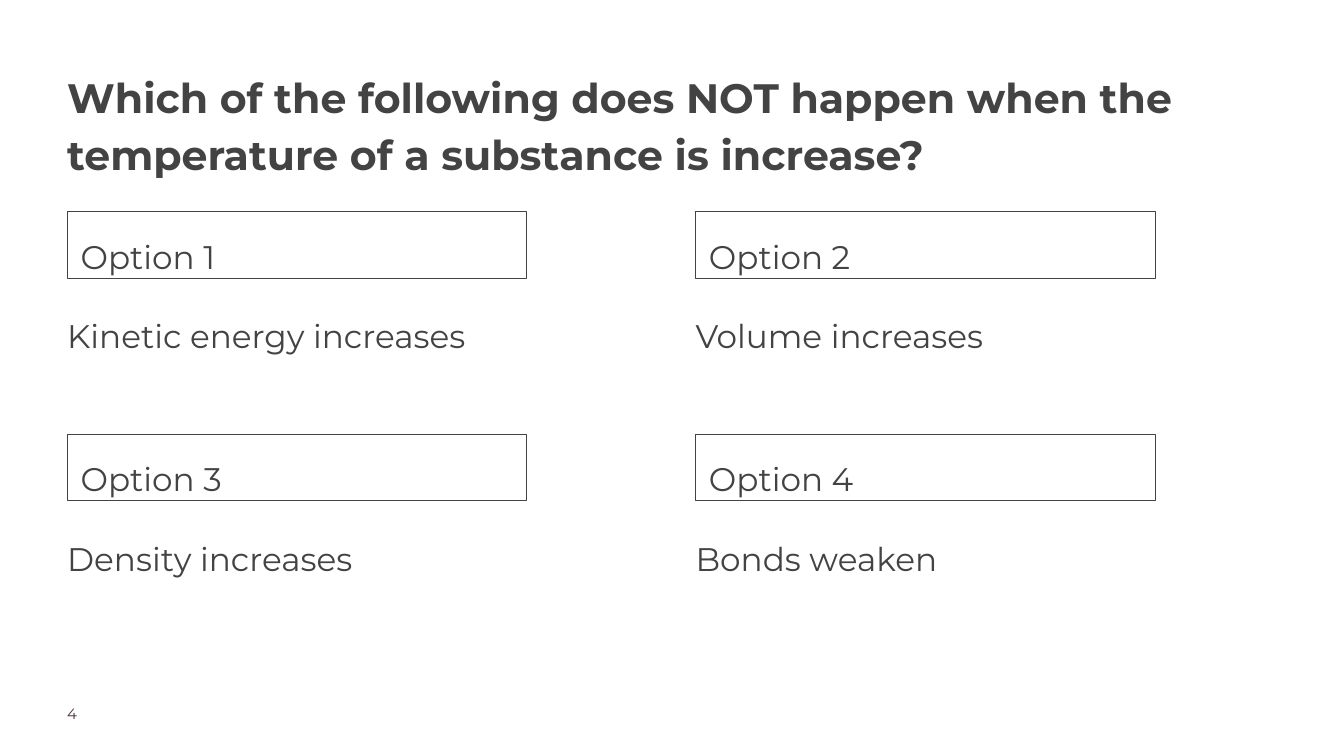
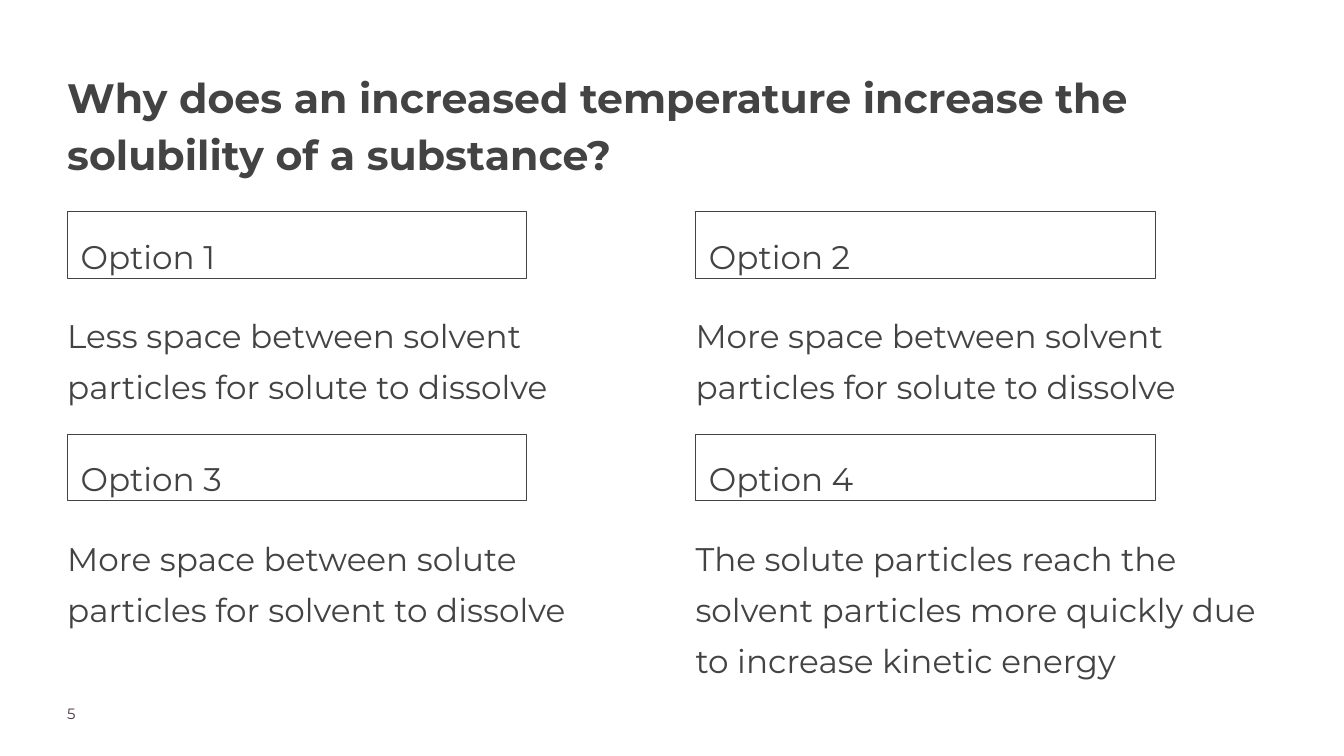
import pptx
import pptx.util
import pptx.dml.color
import pptx.enum.shapes
import pptx.enum.text
from lxml import etree

Inches, Pt = pptx.util.Inches, pptx.util.Pt
RGB = pptx.dml.color.RGBColor.from_string
Text = pptx.enum.text

QUIZ = [
    (4, "Which of the following does NOT happen when the temperature of a substance is increase?",
     ["Kinetic energy increases",
      "Volume increases",
      "Density increases",
      "Bonds weaken"]),
    (5, "Why does an increased temperature increase the solubility of a substance?",
     ["Less space between solvent particles for solute to dissolve",
      "More space between solvent particles for solute to dissolve",
      "More space between solute particles for solvent to dissolve",
      "The solute particles reach the solvent particles more quickly due to increase kinetic energy"]),
]

THEME = {
    "ink": RGB("434343"),
    "plum": RGB("4B3241"),
    "paper": RGB("FFFFFF"),
    "font": "Montserrat",
    "rule": Pt(0.75),
}
STYLES = {
    "title": {"size": 44, "color": "ink", "bold": True, "lines": 1.15, "after": 0, "inset": 0},
    "option": {"size": 35, "color": "ink", "bold": False, "lines": 1.3, "after": 0, "inset": 0.2},
    "answer": {"size": 35, "color": "ink", "bold": False, "lines": 1.3, "after": 20, "inset": 0},
    "page": {"size": 16, "color": "plum", "bold": False, "lines": 1.0, "after": 0, "inset": 0},
}

LEFT, TOP = 1, 3.15
STEP_X, STEP_Y = 9.35, 3.31
DROP = 1.38
COLS = 2
TITLE = (LEFT, 0.97, 18.57, 1.78)
PAGE = (LEFT, 10.48, 1.57, 0.39)
OPTION = (6.84, 0.99)
ANSWER = (8.64, 1.38)


def assign(item, values):
    for name, value in values.items():
        setattr(item, name, value)


def place(shape, box):
    names = ("left", "top", "width", "height")
    assign(shape, dict(zip(names, map(Inches, box))))


def write(shape, words, kind):
    style = STYLES[kind]
    frame = shape.text_frame
    frame.text = words
    sides = ("left", "top", "right", "bottom")
    assign(frame, {"margin_" + side: Inches(style["inset"]) for side in sides})
    assign(frame, {
        "word_wrap": True,
        "auto_size": Text.MSO_AUTO_SIZE.NONE,
        "vertical_anchor": Text.MSO_ANCHOR.TOP,
    })
    para = frame.paragraphs[0]
    assign(para, {
        "alignment": Text.PP_ALIGN.LEFT,
        "line_spacing": style["lines"],
        "space_before": Pt(0),
        "space_after": Pt(style["after"]),
    })
    font = para.runs[0].font
    assign(font, {"name": THEME["font"], "size": Pt(style["size"]), "bold": style["bold"]})
    font.color.rgb = THEME[style["color"]]
    return para


def unbullet(para):
    props = para._p.get_or_add_pPr()
    props.set("marL", "0")
    props.set("indent", "0")
    etree.SubElement(props, pptx.oxml.ns.qn("a:buNone"))


def add_option(slide, words, box):
    shape = slide.shapes.add_shape(
        pptx.enum.shapes.MSO_SHAPE.RECTANGLE, *map(Inches, box))
    shape.shadow.inherit = False
    shape.fill.solid()
    shape.fill.fore_color.rgb = THEME["paper"]
    shape.line.color.rgb = THEME["ink"]
    shape.line.width = THEME["rule"]
    write(shape, words, "option")


def add_quiz(deck, page, question, answers):
    slide = deck.slides.add_slide(deck.slide_layouts.get_by_name("Comparison"))
    title, *bodies = slide.placeholders
    place(title, TITLE)
    write(title, question, "title")
    for index, (body, answer) in enumerate(zip(bodies, answers)):
        row, col = divmod(index, COLS)
        left, top = LEFT + col * STEP_X, TOP + row * STEP_Y
        add_option(slide, f"Option {index + 1}", (left, top, *OPTION))
        place(body, (left, top + DROP, *ANSWER))
        unbullet(write(body, answer, "answer"))
    note = slide.shapes.add_textbox(*map(Inches, PAGE))
    write(note, str(page), "page")


def main():
    deck = pptx.Presentation()
    assign(deck, {"slide_width": Inches(20), "slide_height": Inches(11.25)})
    for page, question, answers in QUIZ:
        add_quiz(deck, page, question, answers)
    deck.save("out.pptx")


if __name__ == "__main__":
    main()
